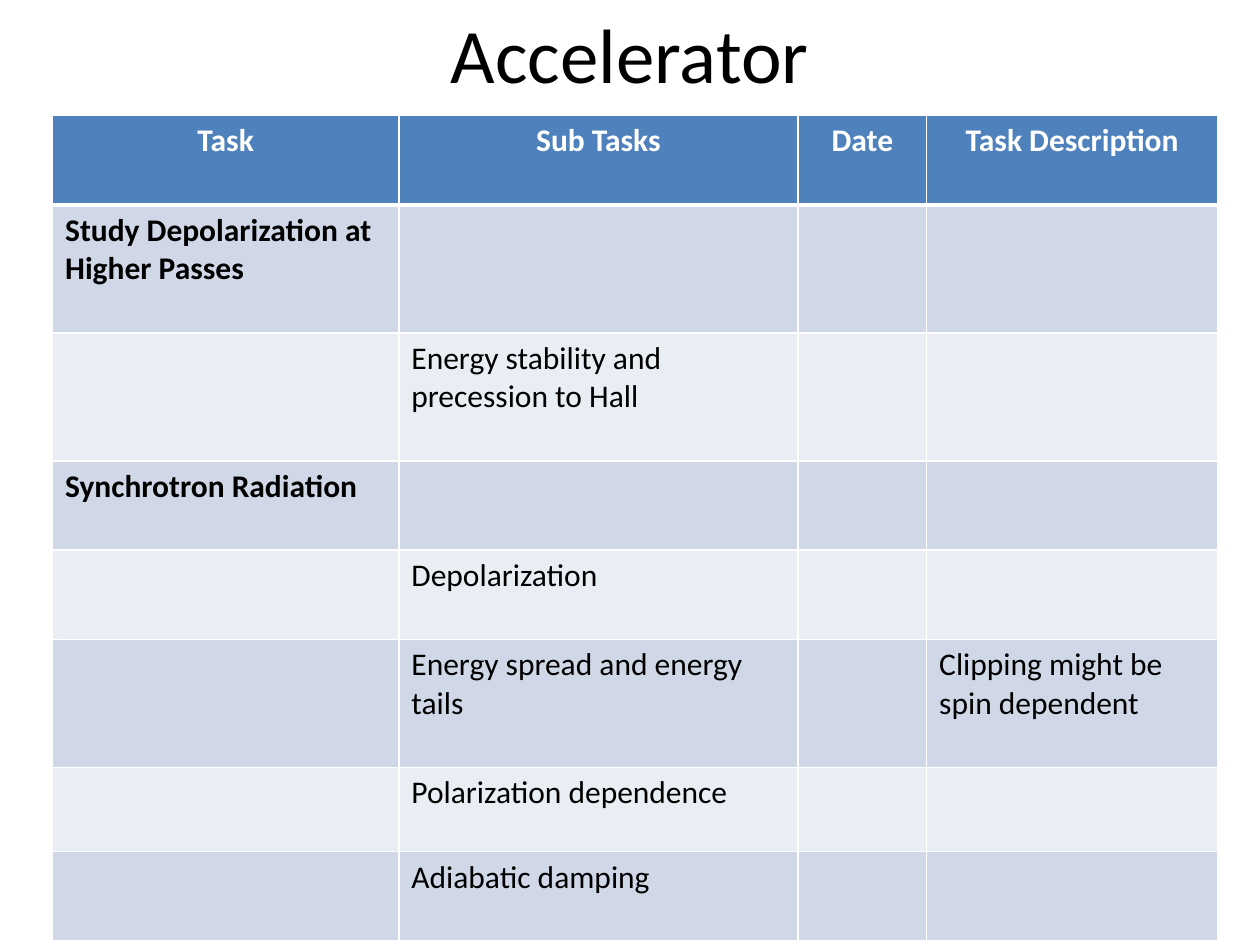
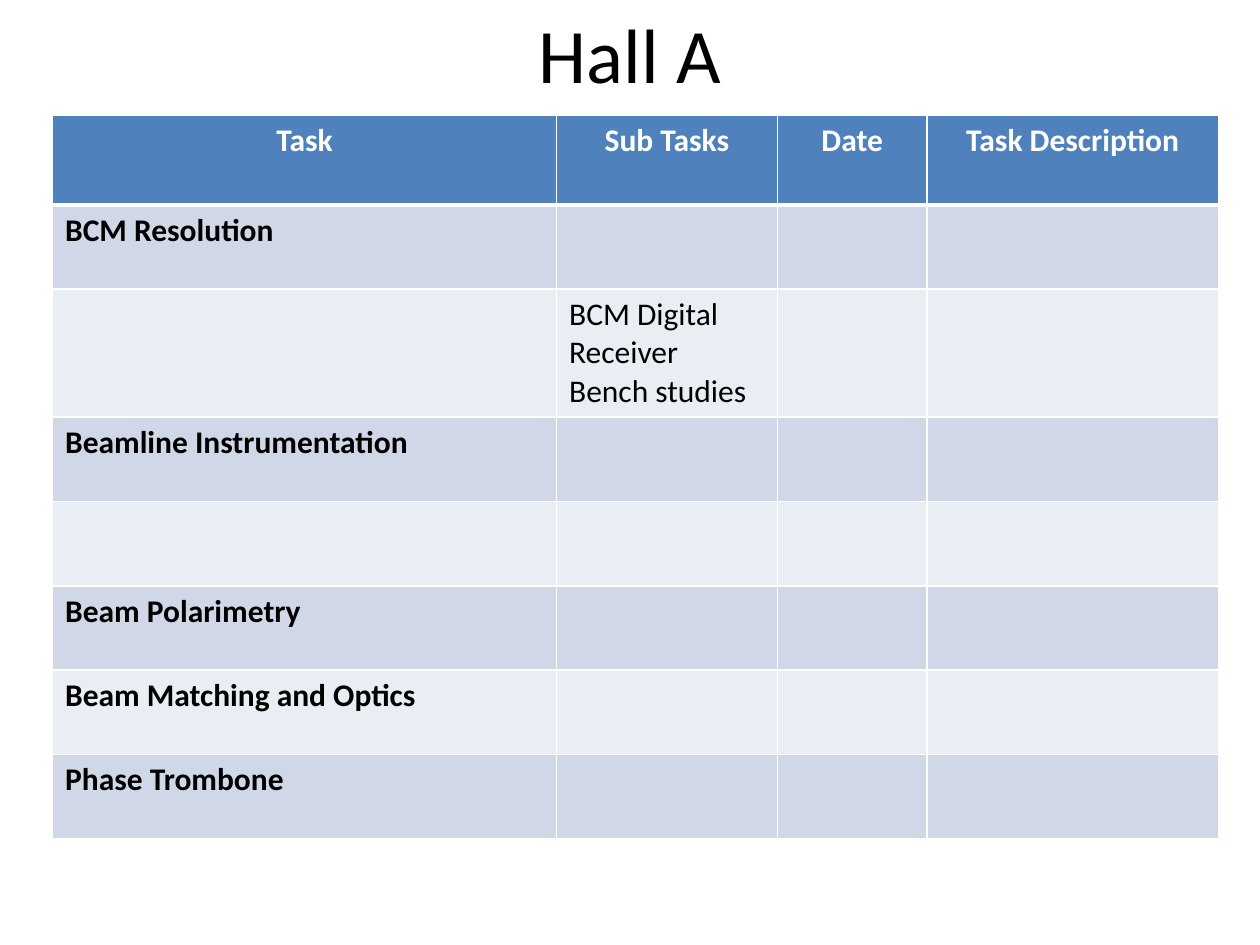
from dataclasses import dataclass

import lxml.etree
import pptx
import pptx.dml.color
import pptx.enum.text
import pptx.oxml.ns
import pptx.util

Cm, Pt = pptx.util.Cm, pptx.util.Pt
RGB = pptx.dml.color.RGBColor.from_string
CENTER = pptx.enum.text.PP_ALIGN.CENTER


@dataclass(frozen=True)
class Theme:
    font: str = "Calibri"
    title_size: int = 44
    cell_size: int = 18
    text: str = "000000"
    header_text: str = "FFFFFF"
    header_fill: str = "4F81BD"
    bands: tuple = ("D0D8E8", "E9EDF4")
    border: str = "FFFFFF"
    thin: int = 1
    thick: int = 3


theme = Theme()


def format_text(p, size, color, bold=False):
    for r in p.runs:
        r.font.name = theme.font
        r.font.size = Pt(size)
        r.font.bold = bold
        r.font.color.rgb = RGB(color)


def add_border(cell, side, width):
    """Draw one side (L, R, T or B); call before filling the cell."""
    qn = pptx.oxml.ns.qn
    props = cell._tc.get_or_add_tcPr()
    ln = lxml.etree.SubElement(props, qn(f"a:ln{side}"), w=str(Pt(width)))
    fill = lxml.etree.SubElement(ln, qn("a:solidFill"))
    lxml.etree.SubElement(fill, qn("a:srgbClr"), val=theme.border)


header = ("Task", "Sub Tasks", "Date", "Task Description")

# Row heights in cm, by the number of text lines they hold
LOW, MEDIUM, TALL = 1.7, 1.8, 2.58

# Each row: height, then the cells from the left
plans = [
    ("Accelerator", (6.98, 8.05, 2.59, 5.87), [
        (TALL, "Study Depolarization at Higher Passes"),
        (TALL, "", "Energy stability and precession to Hall"),
        (MEDIUM, "Synchrotron Radiation"),
        (MEDIUM, "", "Depolarization"),
        (TALL, "", "Energy spread and energy tails", "",
         "Clipping might be spin dependent"),
        (LOW, "", "Polarization dependence"),
        (MEDIUM, "", "Adiabatic damping"),
    ]),
    ("Hall A", (10.16, 4.45, 3.02, 5.87), [
        (LOW, "BCM Resolution"),
        (TALL, "", "BCM Digital Receiver\vBench studies"),
        (LOW, "Beamline Instrumentation"),
        (LOW,),
        (LOW, "Beam Polarimetry"),
        (LOW, "Beam Matching and Optics"),
        (LOW, "Phase Trombone"),
    ]),
]

prs = pptx.Presentation()
prs.slide_width, prs.slide_height = Cm(25.4), Cm(19.05)

for title, widths, tasks in plans:
    s = prs.slides.add_slide(prs.slide_layouts[6])

    sp = s.shapes.add_textbox(Cm(1.27), Cm(0), Cm(22.86), Cm(2.12))
    tf = sp.text_frame
    tf.word_wrap = True
    tf.vertical_anchor = pptx.enum.text.MSO_ANCHOR.MIDDLE
    p = tf.paragraphs[0]
    p.text = title
    p.alignment = CENTER
    format_text(p, theme.title_size, theme.text)

    rows = [(MEDIUM, *header), *tasks]
    heights = [row[0] for row in rows]
    table = s.shapes.add_table(len(rows), len(widths), Cm(1.06), Cm(2.33),
                               Cm(sum(widths)), Cm(sum(heights))).table
    for column, width in zip(table.columns, widths):
        column.width = Cm(width)

    for i, (height, *texts) in enumerate(rows):
        table.rows[i].height = Cm(height)
        is_header = i == 0
        for j in range(len(widths)):
            cell = table.cell(i, j)
            for side in "LRTB":
                under_header = (i, side) in ((0, "B"), (1, "T"))
                add_border(cell, side, theme.thick if under_header else theme.thin)
            cell.fill.solid()
            fill = theme.header_fill if is_header else theme.bands[(i - 1) % 2]
            cell.fill.fore_color.rgb = RGB(fill)
            if j < len(texts) and texts[j]:
                p = cell.text_frame.paragraphs[0]
                p.text = texts[j]
                if is_header:
                    p.alignment = CENTER
                format_text(p, theme.cell_size,
                            theme.header_text if is_header else theme.text,
                            bold=is_header or j == 0)

prs.save("out.pptx")
